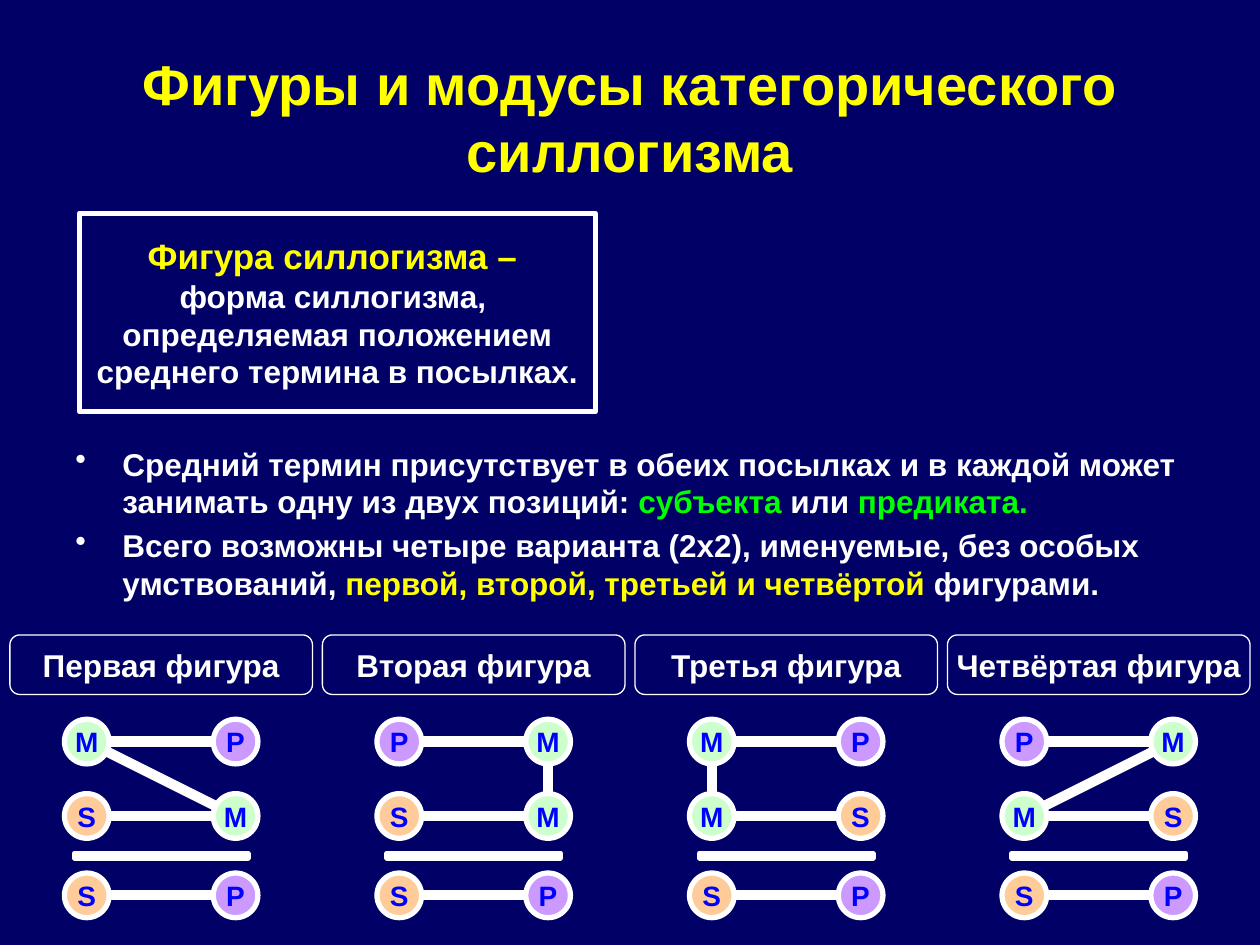
import math
from dataclasses import dataclass

from pptx import Presentation, util as u
from pptx.dml import color
from pptx.enum import shapes, text
from pptx.oxml import xmlchemy, ns


@dataclass(frozen=True)
class Theme:
    font: str = "Arial"
    background: str = "000066"
    light: str = "FFFFFF"
    accent: str = "FFFF00"
    highlight: str = "00FF00"
    link: str = "BBE0E3"
    term: str = "0000FF"
    subject: str = "FFCC99"
    middle: str = "CCFFCC"
    predicate: str = "CC99FF"
    title_size: float = 32
    heading_size: float = 20
    body_size: float = 18
    term_size: float = 16
    thick: float = 3
    thin: float = 0.75


THEME = Theme()
TERM_FILLS = {"S": THEME.subject, "M": THEME.middle, "P": THEME.predicate}
FIGURES = [
    ("Первая фигура", ("MP", "SM", "SP")),
    ("Вторая фигура", ("PM", "SM", "SP")),
    ("Третья фигура", ("MP", "MS", "SP")),
    ("Четвёртая фигура", ("PM", "MS", "SP")),
]
FIGURE_PITCH = 6.3
NODE_SIZE = 0.9
BAR_HEIGHT = 0.1
COLUMNS = (1.75, 4.75)
ROWS = (14.95, 16.45, 18.05)


def rgb(value):
    return color.RGBColor.from_string(value)


def write(paragraph, content, size=THEME.body_size, ink=THEME.light):
    for index, line in enumerate(content.split("\n")):
        if index:
            paragraph.add_line_break()
        if line:
            run = paragraph.add_run()
            run.text = line
            run.font.name = THEME.font
            run.font.size = u.Pt(size)
            run.font.bold = True
            run.font.color.rgb = rgb(ink)


def prepare_frame(shape, wrap=True, inset=None):
    frame = shape.text_frame
    frame.word_wrap = wrap
    frame.vertical_anchor = text.MSO_ANCHOR.MIDDLE
    if inset is not None:
        frame.margin_left = frame.margin_right = u.Cm(inset)
        frame.margin_top = frame.margin_bottom = u.Cm(inset)
    frame.paragraphs[0].alignment = text.PP_ALIGN.CENTER
    return frame


def add_text_box(slide, left, top, width, height):
    return slide.shapes.add_textbox(*map(u.Cm, (left, top, width, height)))


def add_outlined(slide, kind, left, top, width, height, fill=None, line=THEME.thick):
    shape = slide.shapes.add_shape(kind, *map(u.Cm, (left, top, width, height)))
    shape.shadow.inherit = False
    if fill:
        shape.fill.solid()
        shape.fill.fore_color.rgb = rgb(fill)
    else:
        shape.fill.background()
    shape.line.color.rgb = rgb(THEME.light)
    shape.line.width = u.Pt(line)
    return shape


def add_bar(slide, x, y, length, angle=0):
    bar = add_outlined(slide, shapes.MSO_SHAPE.RECTANGLE, x - length / 2,
                       y - BAR_HEIGHT / 2, length, BAR_HEIGHT, THEME.link)
    bar.rotation = angle


def add_link(slide, start, end):
    dx, dy = end[0] - start[0], end[1] - start[1]
    add_bar(slide, (start[0] + end[0]) / 2, (start[1] + end[1]) / 2,
            math.hypot(dx, dy) - NODE_SIZE, math.degrees(math.atan2(dy, dx)))


def add_term(slide, x, y, letter):
    node = add_outlined(slide, shapes.MSO_SHAPE.OVAL, x - NODE_SIZE / 2,
                        y - NODE_SIZE / 2, NODE_SIZE, NODE_SIZE, TERM_FILLS[letter])
    frame = prepare_frame(node, wrap=False)
    write(frame.paragraphs[0], letter, size=THEME.term_size, ink=THEME.term)


def add_figure(slide, offset, name, statements):
    label = add_outlined(slide, shapes.MSO_SHAPE.FLOWCHART_ALTERNATE_PROCESS,
                         offset + 0.2, 12.8, 6.1, 1.2, line=THEME.thin)
    write(prepare_frame(label, wrap=False).paragraphs[0], name)

    columns = [offset + column for column in COLUMNS]
    middles = [(columns[statement.index("M")], y)
               for statement, y in zip(statements[:2], ROWS)]
    if middles[0][0] > middles[1][0]:
        middles.reverse()
    add_link(slide, *middles)
    for y in ROWS:
        add_link(slide, (columns[0], y), (columns[1], y))
    add_bar(slide, sum(columns) / 2, 17.25, 3.5)
    for statement, y in zip(statements, ROWS):
        for x, letter in zip(columns, statement):
            add_term(slide, x, y, letter)


def add_bullet(paragraph, indent):
    properties = paragraph._p.get_or_add_pPr()
    properties.set("marL", str(u.Cm(indent)))
    properties.set("indent", str(-u.Cm(indent)))
    bullet = xmlchemy.OxmlElement("a:buChar")
    bullet.set("char", "•")
    properties.append(bullet)


def add_bullets(slide, items):
    box = add_text_box(slide, 1.27, 8.3, 22.8, 4.5)
    frame = prepare_frame(box)
    for index, item in enumerate(items):
        paragraph = frame.add_paragraph() if index else frame.paragraphs[0]
        paragraph.alignment = text.PP_ALIGN.LEFT
        if index:
            paragraph.space_before = u.Pt(THEME.body_size * 0.2)
        add_bullet(paragraph, 0.95)
        for content, ink in item:
            write(paragraph, content, ink=ink)


def add_definition(slide):
    box = add_outlined(slide, shapes.MSO_SHAPE.RECTANGLE, 1.6, 4.3, 10.4, 4)
    paragraph = prepare_frame(box).paragraphs[0]
    write(paragraph, "Фигура силлогизма – \n", size=THEME.heading_size, ink=THEME.accent)
    write(paragraph, "форма силлогизма, \nопределяемая положением среднего термина в посылках.")


def main():
    presentation = Presentation()
    presentation.slide_width, presentation.slide_height = u.Cm(25.4), u.Cm(19.05)
    slide = presentation.slides.add_slide(presentation.slide_layouts[6])
    slide.background.fill.solid()
    slide.background.fill.fore_color.rgb = rgb(THEME.background)

    title = add_text_box(slide, 1.27, 0.76, 22.86, 3.18)
    write(prepare_frame(title).paragraphs[0], "Фигуры и модусы категорического силлогизма",
          size=THEME.title_size, ink=THEME.accent)
    add_definition(slide)
    add_bullets(slide, [
        [("Средний термин присутствует в обеих посылках и в каждой может "
          "занимать одну из двух позиций: ", THEME.light),
         ("субъекта", THEME.highlight), (" или ", THEME.light),
         ("предиката.", THEME.highlight)],
        [("Всего возможны четыре варианта (2х2), именуемые, без особых "
          "умствований, ", THEME.light),
         ("первой, второй, третьей и четвёртой ", THEME.accent),
         ("фигурами.", THEME.light)],
    ])
    for index, (name, statements) in enumerate(FIGURES):
        add_figure(slide, index * FIGURE_PITCH, name, statements)

    presentation.save("out.pptx")


if __name__ == "__main__":
    main()
